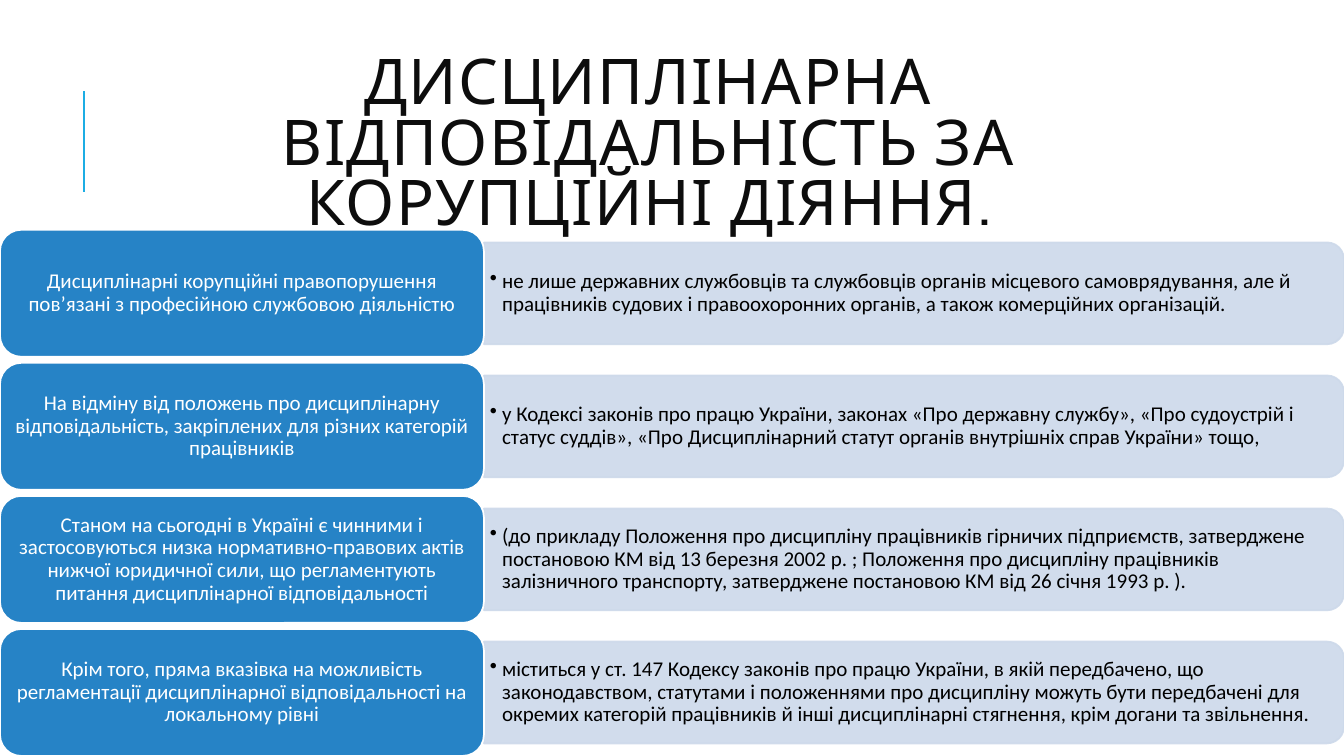
from pptx import Presentation
from pptx.dml.color import RGBColor
from pptx.enum.shapes import MSO_CONNECTOR, MSO_SHAPE
from pptx.enum.text import MSO_ANCHOR, PP_ALIGN
from pptx.oxml.ns import qn
from pptx.util import Inches, Pt
from lxml import etree

ROUNDED = MSO_SHAPE.ROUNDED_RECTANGLE
ROUNDED_TOP = MSO_SHAPE.ROUND_2_SAME_RECTANGLE
STRAIGHT = MSO_CONNECTOR.STRAIGHT
MIDDLE = MSO_ANCHOR.MIDDLE
CENTER, LEFT = PP_ALIGN.CENTER, PP_ALIGN.LEFT

ACCENT = RGBColor(0x1C, 0xAD, 0xE4)
BLUE = RGBColor(0x26, 0x83, 0xC6)
PALE = RGBColor(0xCD, 0xD9, 0xEA)
WHITE = RGBColor(0xFF, 0xFF, 0xFF)
BLACK = RGBColor(0, 0, 0)
TITLE_COLOR = RGBColor(0x0D, 0x0D, 0x0D)

TITLE = "ДИСЦИПЛІНАРНА ВІДПОВІДАЛЬНІСТЬ ЗА КОРУПЦІЙНІ ДІЯННЯ."
ROWS = [
    ("Дисциплінарні корупційні правопорушення пов’язані з професійною службовою діяльністю",
     "не лише державних службовців та службовців органів місцевого самоврядування, але й "
     "працівників судових і правоохоронних органів, а також комерційних організацій."),
    ("На відміну від положень про дисциплінарну відповідальність, закріплених для різних "
     "категорій працівників",
     "у Кодексі законів про працю України, законах «Про державну службу», «Про судоустрій і "
     "статус суддів», «Про Дисциплінарний статут органів внутрішніх справ України» тощо,"),
    ("Станом на сьогодні в Україні є чинними і застосовуються низка нормативно-правових актів "
     "нижчої юридичної сили, що регламентують питання дисциплінарної відповідальності",
     "(до прикладу Положення про дисципліну працівників гірничих підприємств, затверджене "
     "постановою КМ від 13 березня 2002 р. ; Положення про дисципліну працівників "
     "залізничного транспорту, затверджене постановою КМ від 26 січня 1993 р. )."),
    ("Крім того, пряма вказівка на можливість регламентації дисциплінарної відповідальності "
     "на локальному рівні",
     "міститься у ст. 147 Кодексу законів про працю України, в якій передбачено, що "
     "законодавством, статутами і положеннями про дисципліну можуть бути передбачені для "
     "окремих категорій працівників й інші дисциплінарні стягнення, крім догани та звільнення."),
]

FIRST_TOP, ROW_PITCH = 2.28, 1.32
LABEL_WIDTH, LABEL_HEIGHT = 4.8, 1.26
BAND_WIDTH, BAND_HEIGHT = 8.53, 1.01
DETAIL_WIDTH, DETAIL_HEIGHT = 8.48, 0.91


def write_text(frame, text, font, size, color, align, spacing):
    """Fill a frame with one paragraph and return its run."""
    frame.word_wrap = True
    frame.vertical_anchor = MIDDLE
    paragraph = frame.paragraphs[0]
    paragraph.alignment = align
    paragraph.line_spacing = spacing
    run = paragraph.add_run()
    run.text = text
    run.font.name = font
    run.font.size = Pt(size)
    run.font.color.rgb = color
    return run


def write_row_text(frame, text, color, align):
    frame.margin_left = frame.margin_right = Inches(0.06)
    frame.margin_top = frame.margin_bottom = Inches(0.03)
    write_text(frame, text, "Calibri", 15, color, align, 0.9)


def add_bullet(paragraph):
    properties = paragraph._p.get_or_add_pPr()
    properties.set("marL", str(Inches(0.12)))
    properties.set("indent", str(-Inches(0.12)))
    etree.SubElement(properties, qn("a:buChar")).set("char", "•")


def add_block(slide, preset, left, top, width, height, fill, line):
    block = slide.shapes.add_shape(
        preset, Inches(left), Inches(top), Inches(width), Inches(height))
    block.shadow.inherit = False
    block.fill.solid()
    block.fill.fore_color.rgb = fill
    block.line.color.rgb = line
    block.line.width = Pt(1.25)
    return block


def make_translucent(block, percent):
    for color in block._element.spPr.iter(qn("a:srgbClr")):
        etree.SubElement(color, qn("a:alpha")).set("val", str(percent * 1000))


def add_title(slide):
    box = slide.shapes.add_textbox(Inches(1.12), Inches(0.64), Inches(10.63), Inches(1.64))
    run = write_text(box.text_frame, TITLE, "Cabin", 45, TITLE_COLOR, CENTER, 0.8)
    run.font._element.set("spc", "100")


def add_accent_line(slide):
    line = slide.shapes.add_connector(
        STRAIGHT, Inches(0.83), Inches(1.9), Inches(0.83), Inches(0.9))
    line.line.color.rgb = ACCENT
    line.line.width = Pt(1.5)
    etree.SubElement(line._element.spPr, qn("a:effectLst"))


def add_band(slide, middle):
    """Turn a top-rounded block a quarter so its rounded end faces right."""
    left = LABEL_WIDTH + (BAND_WIDTH - BAND_HEIGHT) / 2
    band = add_block(slide, ROUNDED_TOP, left, middle - BAND_WIDTH / 2,
                     BAND_HEIGHT, BAND_WIDTH, PALE, PALE)
    band.rotation = 90
    make_translucent(band, 90)


def add_detail(slide, middle, text):
    box = slide.shapes.add_textbox(
        Inches(LABEL_WIDTH), Inches(middle - DETAIL_HEIGHT / 2),
        Inches(DETAIL_WIDTH), Inches(DETAIL_HEIGHT))
    write_row_text(box.text_frame, text, BLACK, LEFT)
    add_bullet(box.text_frame.paragraphs[0])


def add_row(slide, top, label, detail):
    middle = top + LABEL_HEIGHT / 2
    add_band(slide, middle)
    add_detail(slide, middle, detail)
    label_block = add_block(slide, ROUNDED, 0, top, LABEL_WIDTH, LABEL_HEIGHT, BLUE, WHITE)
    write_row_text(label_block.text_frame, label, WHITE, CENTER)


def main():
    presentation = Presentation()
    presentation.slide_width = Inches(13.33)
    presentation.slide_height = Inches(7.5)
    slide = presentation.slides.add_slide(presentation.slide_layouts[6])
    add_accent_line(slide)
    add_title(slide)
    for index, (label, detail) in enumerate(ROWS):
        add_row(slide, FIRST_TOP + index * ROW_PITCH, label, detail)
    presentation.save("out.pptx")


if __name__ == "__main__":
    main()
